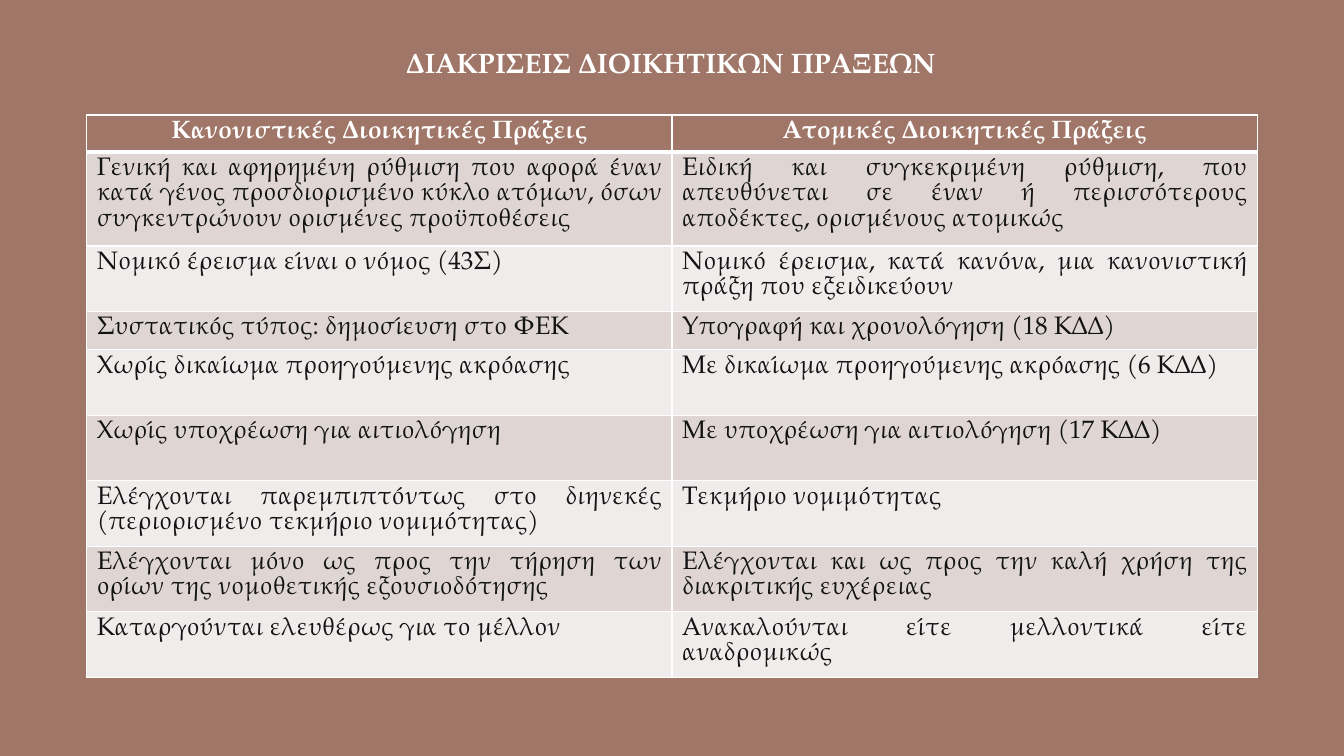
from dataclasses import dataclass
from typing import Any

from lxml import etree
from pptx import Presentation
from pptx.dml.color import RGBColor
from pptx.enum.text import MSO_AUTO_SIZE, PP_ALIGN
from pptx.oxml.ns import qn
from pptx.util import Emu, Pt

CENTER = PP_ALIGN.CENTER
JUSTIFY = PP_ALIGN.JUSTIFY
LEFT = PP_ALIGN.LEFT
FIT_SHAPE = MSO_AUTO_SIZE.SHAPE_TO_FIT_TEXT

EMU_PER_PX = 9144
EMU_PER_PT = 12700


@dataclass(frozen=True)
class Theme:
    font: str = "TeX Gyre Pagella"
    brown: str = "9F7667"
    bands: tuple[str, str] = ("DFD6D3", "F0ECEB")
    white: str = "FFFFFF"
    ink: str = "131313"
    title_size: int = 20
    table_size: int = 18
    thin: int = 1
    thick: int = 3


@dataclass(frozen=True)
class Distinction:
    regulatory: str
    individual: str
    height: int = 65


@dataclass(frozen=True)
class CellStyle:
    fill: str
    color: str
    bold: bool
    align: PP_ALIGN
    top: int
    bottom: int


THEME = Theme()

DISTINCTIONS = [
    Distinction("Κανονιστικές Διοικητικές Πράξεις", "Ατομικές Διοικητικές Πράξεις", 37),
    Distinction(
        "Γενική και αφηρημένη ρύθμιση που αφορά έναν κατά γένος προσδιορισμένο "
        "κύκλο ατόμων, όσων συγκεντρώνουν ορισμένες προϋποθέσεις",
        "Ειδική και συγκεκριμένη ρύθμιση, που απευθύνεται σε έναν ή περισσότερους "
        "αποδέκτες, ορισμένους ατομικώς",
        93,
    ),
    Distinction(
        "Νομικό έρεισμα είναι ο νόμος (43Σ)",
        "Νομικό έρεισμα, κατά κανόνα, μια κανονιστική πράξη που εξειδικεύουν",
    ),
    Distinction("Συστατικός τύπος: δημοσίευση στο ΦΕΚ", "Υπογραφή και χρονολόγηση (18 ΚΔΔ)", 38),
    Distinction("Χωρίς δικαίωμα προηγούμενης ακρόασης", "Με δικαίωμα προηγούμενης ακρόασης (6 ΚΔΔ)"),
    Distinction("Χωρίς υποχρέωση για αιτιολόγηση", "Με υποχρέωση για αιτιολόγηση (17 ΚΔΔ)"),
    Distinction(
        "Ελέγχονται παρεμπιπτόντως στο διηνεκές (περιορισμένο τεκμήριο νομιμότητας)",
        "Τεκμήριο νομιμότητας",
    ),
    Distinction(
        "Ελέγχονται μόνο ως προς την τήρηση των ορίων της νομοθετικής εξουσιοδότησης",
        "Ελέγχονται και ως προς την καλή χρήση της διακριτικής ευχέρειας",
    ),
    Distinction("Καταργούνται ελευθέρως για το μέλλον", "Ανακαλούνται είτε μελλοντικά είτε αναδρομικώς"),
]


def px(length: int) -> Emu:
    return Emu(length * EMU_PER_PX)


def write(frame: Any, text: str, size: int, color: str, bold: bool, align: PP_ALIGN) -> None:
    para = frame.paragraphs[0]
    para.alignment = align
    span = para.add_run()
    span.text = text
    for name, value in {"name": THEME.font, "size": Pt(size), "bold": bold}.items():
        setattr(span.font, name, value)
    span.font.color.rgb = RGBColor.from_string(color)


def add_borders(cell: Any, widths: dict[str, int]) -> None:
    properties = cell._tc.get_or_add_tcPr()
    for position, (side, width) in enumerate(widths.items()):
        line = etree.Element(qn(f"a:ln{side}"), w=str(width * EMU_PER_PT))
        fill = etree.SubElement(line, qn("a:solidFill"))
        etree.SubElement(fill, qn("a:srgbClr"), val=THEME.white)
        properties.insert(position, line)


def row_style(index: int) -> CellStyle:
    if index == 0:
        return CellStyle(THEME.brown, THEME.white, True, CENTER, THEME.thin, THEME.thick)
    top = THEME.thick if index == 1 else THEME.thin
    return CellStyle(THEME.bands[(index - 1) % 2], THEME.ink, False, JUSTIFY, top, THEME.thin)


def draw_cell(cell: Any, text: str, style: CellStyle) -> None:
    cell.fill.solid()
    cell.fill.fore_color.rgb = RGBColor.from_string(style.fill)
    add_borders(cell, {"L": THEME.thin, "R": THEME.thin, "T": style.top, "B": style.bottom})
    write(cell.text_frame, text, THEME.table_size, style.color, style.bold, style.align)


def draw_table(page: Any, left: int, top: int, width: int) -> None:
    height = sum(row.height for row in DISTINCTIONS)
    table = page.shapes.add_table(
        len(DISTINCTIONS), 2, px(left), px(top), px(width), px(height)
    ).table
    for index, distinction in enumerate(DISTINCTIONS):
        table.rows[index].height = px(distinction.height)
        texts = (distinction.regulatory, distinction.individual)
        for column, text in enumerate(texts):
            draw_cell(table.cell(index, column), text, row_style(index))


def draw_title(page: Any, left: int, top: int, width: int, height: int) -> None:
    box = page.shapes.add_textbox(px(left), px(top), px(width), px(height))
    for name, value in {"word_wrap": True, "auto_size": FIT_SHAPE}.items():
        setattr(box.text_frame, name, value)
    write(box.text_frame, "ΔΙΑΚΡΙΣΕΙΣ ΔΙΟΙΚΗΤΙΚΩΝ ΠΡΑΞΕΩΝ", THEME.title_size, THEME.white, True, LEFT)


def main() -> None:
    deck = Presentation()
    deck.slide_width, deck.slide_height = px(1333), px(750)
    page = deck.slides.add_slide(deck.slide_layouts[6])
    page.background.fill.solid()
    page.background.fill.fore_color.rgb = RGBColor.from_string(THEME.brown)
    draw_table(page, 86, 114, 1161)
    draw_title(page, 393, 40, 548, 44)
    deck.save("out.pptx")


if __name__ == "__main__":
    main()
